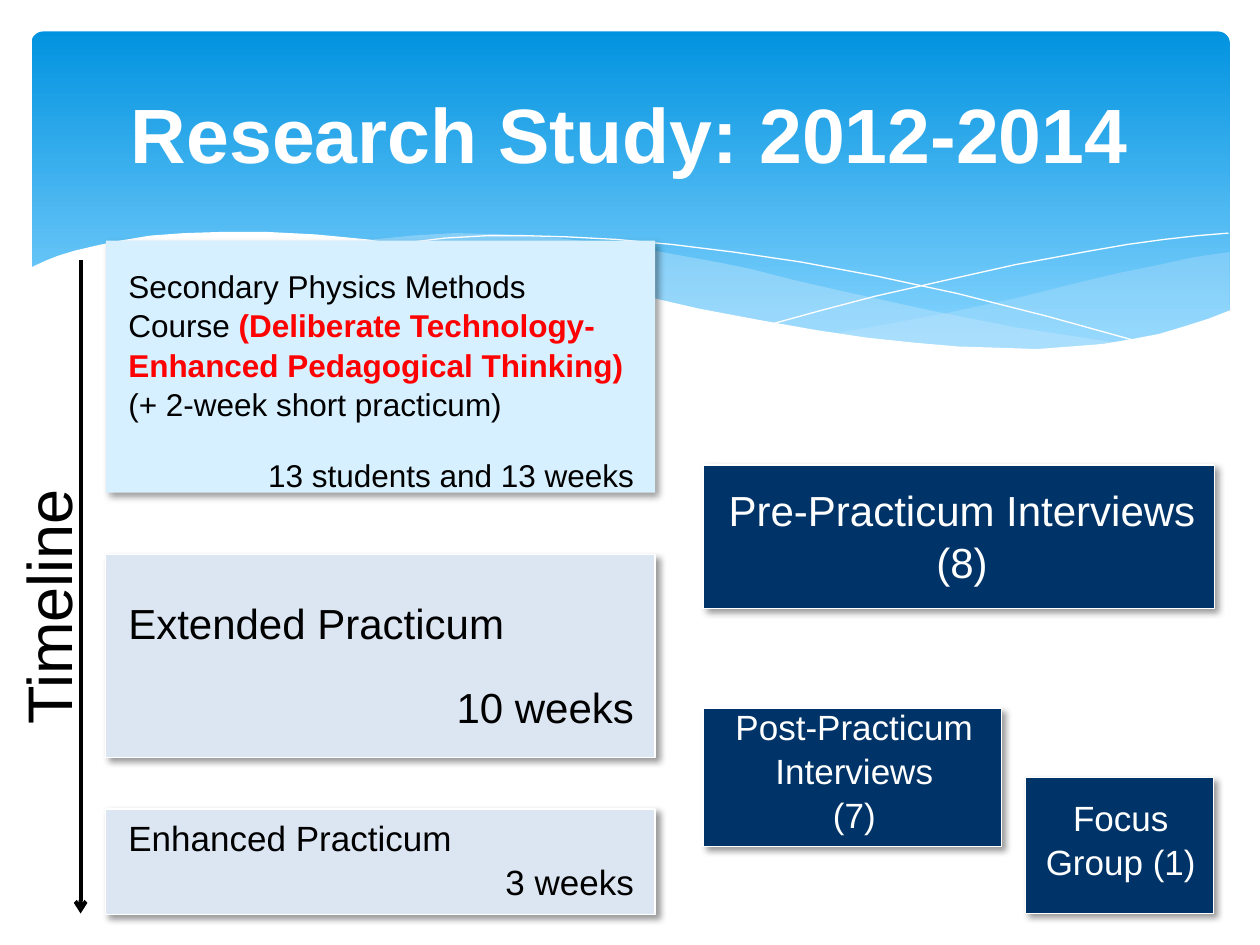
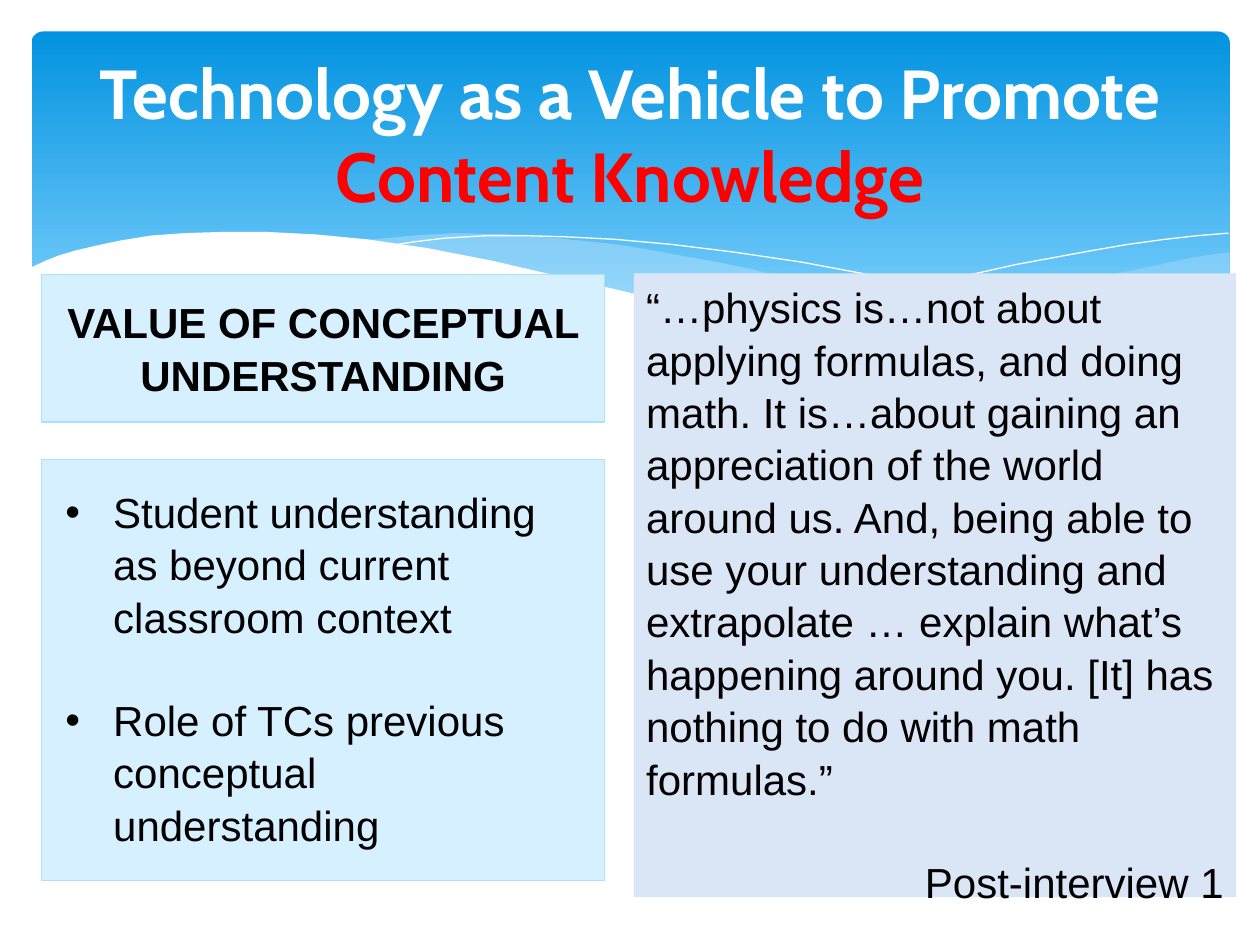
from pptx import Presentation
from pptx.dml.color import RGBColor
from pptx.enum.shapes import MSO_CONNECTOR as Link, MSO_SHAPE as Form
from pptx.enum.text import MSO_ANCHOR as Anchor, PP_ALIGN as Align
from pptx.oxml import parse_xml
from pptx.oxml.ns import nsdecls, qn
from pptx.util import Inches, Pt

rgb = RGBColor.from_string
NAVY, PALE, SKY = "003468", "DCE6F2", "D6F0FF"
WHITE, BLACK, RED = "FFFFFF", "000000", "FF0000"
LEFT, MID, RIGHT = Align.LEFT, Align.CENTER, Align.RIGHT
SHADE = (
    f'<a:outerShdw {nsdecls("a")} blurRad="50800" dist="38100" dir="2700000">'
    '<a:srgbClr val="000000"><a:alpha val="40000"/></a:srgbClr></a:outerShdw>'
)


def box(page, at, hue, edge=None, shade=False):
    rect = page.shapes.add_shape(Form.RECTANGLE, *map(Inches, at))
    rect.shadow.inherit = False
    rect.fill.solid()
    rect.fill.fore_color.rgb = rgb(hue)
    if edge:
        rect.line.color.rgb = rgb(edge)
        rect.line.width = Pt(0.75)
    else:
        rect.line.fill.background()
    if shade:
        rect._element.spPr.find(qn("a:effectLst")).append(parse_xml(SHADE))
    return rect


def write(shape, paras, size, hue=BLACK, name="Arial", bold=False,
          anchor=Anchor.TOP, pitch=1.04):
    frame = shape.text_frame
    frame.word_wrap = True
    frame.vertical_anchor = anchor
    for i, (form, runs) in enumerate(paras):
        para = frame.add_paragraph() if i else frame.paragraphs[0]
        form = {"alignment": LEFT, "line_spacing": pitch} | form
        for key, val in form.items():
            setattr(para, key, val)
        for text, own in runs:
            run = para.add_run()
            run.text = text
            look = {"size": Pt(size), "name": name, "bold": bold, "hue": hue} | own
            run.font.color.rgb = rgb(look.pop("hue"))
            for key, val in look.items():
                setattr(run.font, key, val)


swell = [
    (9.76, 2), (9.48, 2.04), (9.21, 2.1), (8.91, 2.16), (8.61, 2.23),
    (8.05, 2.37), (7.53, 2.48), (7.06, 2.57), (6.61, 2.65), (6.91, 2.69),
    (7.19, 2.72), (7.57, 2.76), (8.03, 2.78), (8.44, 2.77), (8.81, 2.73),
    (9.13, 2.67), (9.42, 2.59), (9.63, 2.52), (9.76, 2.47),
]
drift = [
    (8.93, 2.73), (8.66, 2.69), (8.07, 2.6), (7.41, 2.47), (6.68, 2.31),
    (6.29, 2.22), (5.98, 2.14), (5.69, 2.08), (5.41, 2.03), (5.14, 1.98),
    (4.89, 1.94), (4.42, 1.89), (3.99, 1.86), (3.61, 1.85), (3.28, 1.87),
    (2.86, 1.91), (3.23, 1.96), (3.62, 2.03), (4.04, 2.11), (4.49, 2.22),
    (5.3, 2.4), (5.84, 2.52), (6.34, 2.61), (6.8, 2.68), (7.22, 2.74),
    (7.61, 2.77), (7.96, 2.78), (8.38, 2.78), (8.67, 2.76),
]
fall = [
    (3.09, 1.95), (3.28, 1.92), (3.53, 1.89), (3.87, 1.87), (4.16, 1.87),
    (4.5, 1.88), (4.89, 1.9), (5.33, 1.94), (5.82, 2), (6.36, 2.08),
    (6.95, 2.19), (7.6, 2.33), (8.31, 2.51), (9.07, 2.72),
]
rise = [
    (6.13, 2.57), (6.53, 2.46), (6.95, 2.35), (7.48, 2.23), (8.06, 2.1),
    (8.66, 1.99), (8.95, 1.94), (9.24, 1.9), (9.51, 1.87), (9.75, 1.85),
]
foam = [
    (9.77, 2.46), (9.59, 2.53), (9.4, 2.59), (9.2, 2.65), (8.99, 2.69),
    (8.75, 2.73), (8.5, 2.75), (8.23, 2.77), (7.93, 2.76), (7.61, 2.75),
    (7.26, 2.72), (6.88, 2.68), (6.48, 2.62), (6.03, 2.54), (5.55, 2.45),
    (5.03, 2.33), (4.47, 2.2), (3.91, 2.07), (3.4, 1.97), (2.92, 1.9),
    (2.5, 1.86), (2.11, 1.84), (1.77, 1.84), (1.46, 1.85), (1.19, 1.87),
    (0.95, 1.91), (0.76, 1.95), (0.59, 1.99), (0.46, 2.03), (0.36, 2.07),
    (0.23, 2.13), (0.23, 3.29), (9.77, 3.29),
]
waves = [(swell, "C6E7FC", 29), (drift, "C6E7FC", 40), (fall, None, 0),
         (rise, None, 0), (foam, WHITE, 100)]
heads = [
    ([("Research Study: 2012-2014", {})], 44, "Arial"),
    ([("Technology as a Vehicle to Promote ", {}),
      ("Content Knowledge", {"hue": RED})], 39.6, "Cabin"),
]

deck = Presentation()
deck.slide_width, deck.slide_height = Inches(10), Inches(7.5)
pages = []
for runs, size, name in heads:
    page = deck.slides.add_slide(deck.slide_layouts[6])
    pages.append(page)
    band = page.shapes.add_shape(
        Form.ROUNDED_RECTANGLE, *map(Inches, (0.25, 0.25, 9.51, 2.7)))
    band.adjustments[0] = 0.034
    band.shadow.inherit = False
    band.line.fill.background()
    band.fill.gradient()
    band.fill.gradient_angle = 270
    for stop, spot, hue in zip(band.fill.gradient_stops, (0, 0.9), ("0293E0", "83D3FE")):
        stop.position = spot
        stop.color.rgb = rgb(hue)
    for dots, hue, alpha in waves:
        dots = [(Inches(x), Inches(y)) for x, y in dots]
        pen = page.shapes.build_freeform(*dots[0])
        pen.add_line_segments(dots[1:], close=bool(hue))
        wave = pen.convert_to_shape()
        wave.shadow.inherit = False
        if hue:
            wave.line.fill.background()
            wave.fill.solid()
            wave.fill.fore_color.rgb = rgb(hue)
            tint = wave._element.spPr.find(qn("a:solidFill"))[0]
            tint.append(parse_xml(f'<a:alpha {nsdecls("a")} val="{alpha * 1000}"/>'))
        else:
            wave.fill.background()
            wave.line.color.rgb = rgb(WHITE)
            wave.line.width = Pt(0)
    title = page.shapes.add_textbox(*map(Inches, (0.5, 0.37, 9, 1.37)))
    write(title, [({"alignment": MID}, runs)], size, WHITE, name, True, Anchor.MIDDLE, 1.0)

study, value = pages
gap = {"space_after": Pt(18)}
mid, right = {"alignment": MID}, {"alignment": RIGHT}
steps = [
    ((0.84, 1.91, 4.36, 2), SKY, None, (0.92, 2.06, 4.21, 1.87), 18, BLACK, [
        ({}, [("Secondary Physics Methods Course ", {}),
              ("(Deliberate Technology-Enhanced Pedagogical Thinking)",
               {"hue": RED, "bold": True})]),
        (gap, [("(+ 2-week short practicum)", {})]),
        (right, [("13 students and 13 weeks", {})])]),
    ((0.84, 4.4, 4.36, 1.61), PALE, WHITE, (0.92, 4.68, 4.21, 1.16), 24, BLACK, [
        (gap, [("Extended Practicum", {})]), (right, [("10 weeks", {})])]),
    ((0.84, 6.42, 4.36, 0.84), PALE, WHITE, (0.92, 6.42, 4.21, 0.88), 20, BLACK, [
        ({}, [("Enhanced Practicum", {})]), (right, [("3 weeks", {})])]),
    ((5.58, 3.69, 4.06, 1.14), NAVY, WHITE, (5.63, 3.78, 4.01, 1.01), 24, WHITE, [
        (mid, [("Pre-Practicum Interviews", {})]), (mid, [("(8)", {})])]),
    ((5.58, 5.62, 2.37, 1.1), NAVY, WHITE, (5.62, 5.54, 2.32, 1.21), 20, WHITE, [
        (mid, [("Post-Practicum Interviews", {})]), (mid, [("(7)", {})])]),
    ((8.14, 6.17, 1.49, 1.08), NAVY, WHITE, (8.15, 6.26, 1.49, 0.88), 20, WHITE, [
        (mid, [("Focus Group (1)", {})])]),
]
for at, hue, edge, area, size, ink, paras in steps:
    box(study, at, hue, edge, True)
    write(study.shapes.add_textbox(*map(Inches, area)), paras, size, ink)

arrow = study.shapes.add_connector(
    Link.STRAIGHT, *map(Inches, (0.64, 2.06, 0.64, 7.25)))
arrow.line.color.rgb = rgb(BLACK)
arrow.line.width = Pt(2.25)
arrow.line._get_or_add_ln().append(parse_xml(f'<a:tailEnd {nsdecls("a")} type="arrow"/>'))
arrow._element.spPr.append(parse_xml(f'<a:effectLst {nsdecls("a")}/>'))
label = study.shapes.add_textbox(*map(Inches, (-1.64, 3.5, 3.99, 0.71)))
label.rotation = 270
write(label, [({}, [("Timeline", {})])], 36)

box(value, (0.33, 3.65, 4.47, 3.34), SKY, "ADE2FE")
points = value.shapes.add_textbox(*map(Inches, (0.42, 3.83, 4.32, 2.93)))
write(points, [
    ({}, [("Student understanding as beyond current classroom context", {})]),
    ({"space_before": Pt(29)},
     [("Role of TCs previous conceptual understanding", {})]),
], 24, anchor=Anchor.MIDDLE)
for para in points.text_frame.paragraphs:
    props = para._p.get_or_add_pPr()
    props.set("marL", str(Inches(0.38)))
    props.set("indent", str(-Inches(0.38)))
    props.append(parse_xml(f'<a:buFont {nsdecls("a")} typeface="Arial"/>'))
    props.append(parse_xml(f'<a:buChar {nsdecls("a")} char="•"/>'))

quote = box(value, (5.03, 2.17, 4.78, 4.95), "DAE6F6")
write(quote, [
    ({}, [("“…physics is…not about applying formulas, and doing math. "
           "It is…about gaining an appreciation of the world around us. "
           "And, being able to use your understanding and extrapolate … "
           "explain what’s happening around you. [It] has nothing to do "
           "with math formulas.”", {})]),
    ({"alignment": RIGHT, "space_before": Pt(29)}, [("Post-interview 1", {})]),
], 24)

box(value, (0.33, 2.18, 4.47, 1.17), SKY, "ADE2FE")
theme = value.shapes.add_textbox(*map(Inches, (0.33, 2.29, 4.47, 1.31)))
write(theme, [(mid, [("VALUE OF CONCEPTUAL UNDERSTANDING", {})])], 24, bold=True)

deck.save("out.pptx")
